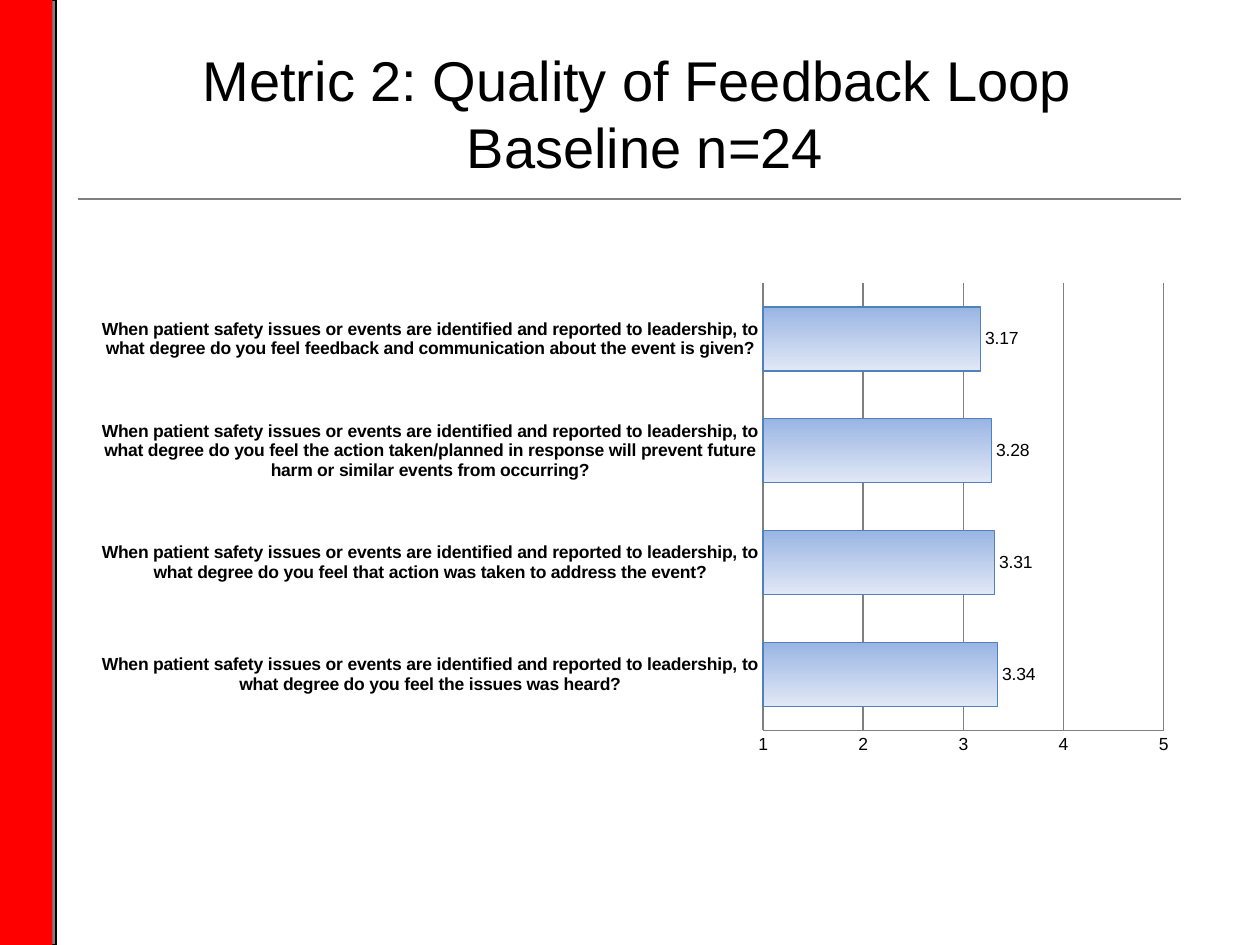
"""Build the feedback loop quality slide with its bar chart."""
from pptx import Presentation
from pptx.chart.data import CategoryChartData
from pptx.dml.color import RGBColor
from pptx.enum.chart import XL_CHART_TYPE, XL_LABEL_POSITION, XL_TICK_MARK
from pptx.enum.shapes import MSO_CONNECTOR, MSO_SHAPE
from pptx.enum.text import MSO_ANCHOR, PP_ALIGN
from pptx.oxml import parse_xml
from pptx.oxml.ns import nsdecls, qn
from pptx.util import Pt

BAR = XL_CHART_TYPE.BAR_CLUSTERED
OUT = XL_LABEL_POSITION.OUTSIDE_END
NO_TICK = XL_TICK_MARK.NONE
RECT = MSO_SHAPE.RECTANGLE
LINE = MSO_CONNECTOR.STRAIGHT
MIDDLE = MSO_ANCHOR.MIDDLE
CENTER = PP_ALIGN.CENTER

HEX = {"black": "000000", "gray": "808080", "red": "FF0000",
       "edge": "4F81BD", "top": "9AB5E4", "base": "E1E8F5"}
COLORS = {name: RGBColor.from_string(code) for name, code in HEX.items()}
FONT = "Arial"

STEM = ("When patient safety issues or events are identified and reported "
        "to leadership, to what degree do you feel ")
SCORES = [
    ("the issues was heard?", 3.34),
    ("that action was taken to address the event?", 3.31),
    ("the action taken/planned in response will prevent future harm "
     "or similar events from occurring?", 3.28),
    ("feedback and communication about the event is given?", 3.17),
]


def style(font, size):
    font.name = FONT
    font.size = Pt(size)
    font.color.rgb = COLORS["black"]


def stroke(line, color):
    line.color.rgb = COLORS[color]
    line.width = Pt(0.75)


deck = Presentation()
deck.slide_width, deck.slide_height = Pt(720), Pt(540)
slide = deck.slides.add_slide(deck.slide_layouts[5])
shapes = slide.shapes

for left, width, color in [(26, 6, "gray"), (0, 30, "red")]:
    band = shapes.add_shape(RECT, Pt(left), 0, Pt(width), Pt(540))
    band.shadow.inherit = False
    band.fill.solid()
    band.fill.fore_color.rgb = COLORS[color]
    if color == "gray":
        stroke(band.line, "black")
    else:
        band.line.fill.background()

rule = shapes.add_connector(LINE, Pt(44.6), Pt(113.8), Pt(674.6), Pt(113.8))
stroke(rule.line, "gray")
rule._element.spPr.append(parse_xml(f"<a:effectLst {nsdecls('a')}/>"))

title = shapes.title
title.left, title.top = Pt(41.8), Pt(30.2)
title.width, title.height = Pt(653.8), Pt(68.4)
frame = title.text_frame
frame.word_wrap = True
frame.vertical_anchor = MIDDLE
frame.text = "Metric 2: Quality of Feedback Loop \vBaseline n=24"
head = frame.paragraphs[0]
head.alignment = CENTER
style(head.font, 32)

data = CategoryChartData()
data.categories = [STEM + ending for ending, score in SCORES]
data.add_series("Series 1", [score for ending, score in SCORES])
chart = shapes.add_chart(BAR, Pt(48.2), Pt(156.2), Pt(635.8), Pt(280.8),
                         data).chart
chart.has_legend = False
chart.has_title = False
style(chart.font, 10)

cats = chart.category_axis
cats.tick_labels.font.bold = True
cats.has_major_gridlines = False
vals = chart.value_axis
vals.minimum_scale, vals.maximum_scale, vals.major_unit = 1, 5, 1
vals.has_major_gridlines = True
stroke(vals.major_gridlines.format.line, "gray")
for axis in (cats, vals):
    axis.major_tick_mark = axis.minor_tick_mark = NO_TICK
    stroke(axis.format.line, "gray")

plot = chart.plots[0]
plot.gap_width = 75
plot.vary_by_categories = False
plot.has_data_labels = True
labels = plot.data_labels
labels.show_value = True
labels.position = OUT
style(labels.font, 10)

bars = plot.series[0].format
bars.fill.gradient()
bars.fill.gradient_angle = 270
for stop, color in zip(bars.fill.gradient_stops, ("top", "base")):
    stop.color.rgb = COLORS[color]
stroke(bars.line, "edge")

area = chart._chartSpace.chart.plotArea
for old in area.findall(qn("c:layout")):
    area.remove(old)
places = {"x": 0.61, "y": 0.02, "w": 0.36, "h": 0.91}
spots = "".join(f'<c:{key} val="{part}"/>' for key, part in places.items())
area.insert(0, parse_xml(
    f"<c:layout {nsdecls('c')}><c:manualLayout>"
    '<c:layoutTarget val="inner"/><c:xMode val="edge"/><c:yMode val="edge"/>'
    f"{spots}</c:manualLayout></c:layout>"))

deck.save("out.pptx")
